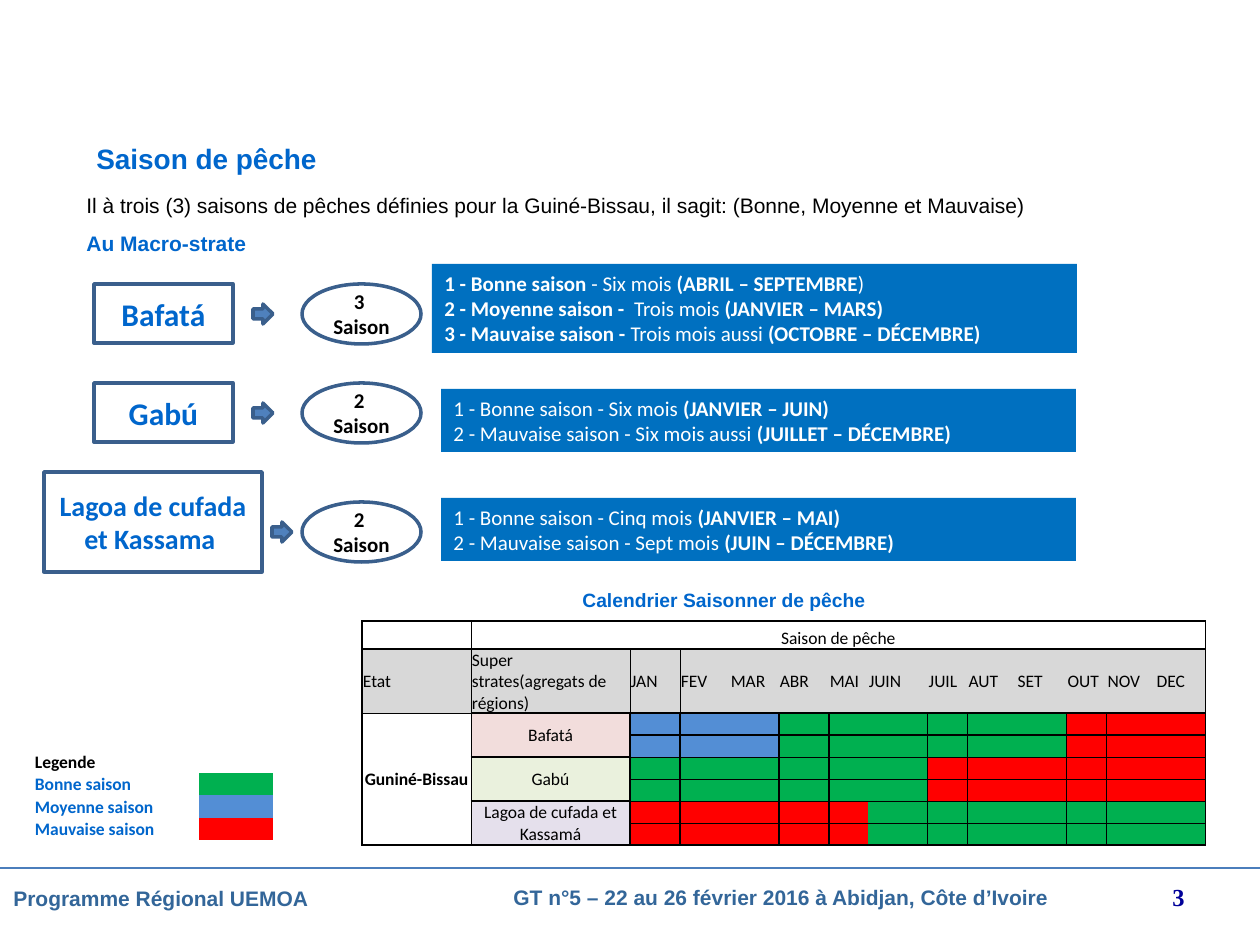
from lxml import etree
from pptx import Presentation
from pptx.dml.color import RGBColor
from pptx.enum.shapes import MSO_CONNECTOR, MSO_SHAPE
from pptx.enum.text import MSO_ANCHOR, PP_ALIGN
from pptx.oxml.ns import qn
from pptx.util import Emu, Pt

RECT, OVAL, ARROW = MSO_SHAPE.RECTANGLE, MSO_SHAPE.OVAL, MSO_SHAPE.RIGHT_ARROW
LEFT, CENTER, RIGHT = PP_ALIGN.LEFT, PP_ALIGN.CENTER, PP_ALIGN.RIGHT
TOP, MIDDLE, BOTTOM = MSO_ANCHOR.TOP, MSO_ANCHOR.MIDDLE, MSO_ANCHOR.BOTTOM
PLAIN_TABLE = "{2D5ABB26-0587-4C30-8999-92F81FD0307C}"
SIDES = ("a:lnL", "a:lnR", "a:lnT", "a:lnB")
COLORS = {
    "black": "000000", "white": "FFFFFF", "title": "0066CC", "panel": "0070C0",
    "outline": "3A5F8C", "arrow": "4F81BD", "rule": "4B7EBC", "footer": "336699",
    "number": "000099", "header": "D8D8D8", "bafata": "F2DDDC", "gabu": "EAF1DD",
    "lagoa": "E5E0EC", "good": "00B050", "medium": "538ED5", "bad": "FF0000",
}
SEASONS = {"B": "good", "M": "medium", "X": "bad"}
MONTHS = "JAN FEV MAR ABR MAI JUIN JUIL AUT SET OUT NOV DEC".split()


def px(length):
    return Emu(round(length * 914400 / 126))


def rgb(name):
    return RGBColor.from_string(COLORS[name])


class Page:
    """Holds the current slide and its style; lengths are in px."""

    def __init__(self, slide):
        self.shapes = slide.shapes

    def fill_text(self, frame, text, size, color, font="Calibri", align=LEFT, bold=False):
        """Fill a frame line by line; parts between ** are bold."""
        for index, line in enumerate(text.split("\n")):
            paragraph = frame.paragraphs[0] if index == 0 else frame.add_paragraph()
            paragraph.alignment = align
            for position, part in enumerate(line.split("**")):
                if not part:
                    continue
                run = paragraph.add_run()
                run.text = part
                run.font.name = font
                run.font.size = Pt(size)
                run.font.bold = bold or position % 2 == 1
                run.font.color.rgb = rgb(color)

    def label(self, area, text, size, color, font="Arial", align=LEFT, bold=True):
        box = self.shapes.add_textbox(*map(px, area))
        box.text_frame.word_wrap = True
        self.fill_text(box.text_frame, text, size, color, font, align, bold)

    def shape(self, kind, area, fill, outline=None):
        shape = self.shapes.add_shape(kind, *map(px, area))
        shape.shadow.inherit = False
        shape.fill.solid()
        shape.fill.fore_color.rgb = rgb(fill)
        if outline:
            shape.line.color.rgb = rgb(outline)
            shape.line.width = Pt(2)
        else:
            shape.line.fill.background()
        return shape

    def panel(self, area, text):
        frame = self.shape(RECT, area, "panel").text_frame
        frame.word_wrap = True
        frame.vertical_anchor = TOP
        self.fill_text(frame, text, 12, "white")

    def node(self, kind, area, text, size, color):
        frame = self.shape(kind, area, "white", "outline").text_frame
        frame.word_wrap = True
        frame.vertical_anchor = MIDDLE
        self.fill_text(frame, text, size, color, align=CENTER, bold=True)

    def rule(self, y, width):
        line = self.shapes.add_connector(MSO_CONNECTOR.STRAIGHT, 0, px(y), px(width), px(y))
        line.line.color.rgb = rgb("rule")
        line.line.width = Pt(0.75)
        etree.SubElement(line._element.spPr, qn("a:effectLst"))

    def table(self, left, top, widths, heights):
        frame = self.shapes.add_table(len(heights), len(widths), px(left), px(top),
                                      px(sum(widths)), px(sum(heights)))
        table = frame.table
        table.first_row = table.horz_banding = False
        table._tbl.tblPr.find(qn("a:tableStyleId")).text = PLAIN_TABLE
        for column, width in zip(table.columns, widths):
            column.width = px(width)
        for row, height in zip(table.rows, heights):
            row.height = px(height)
        for cell in table.iter_cells():
            cell.margin_left = cell.margin_right = cell.margin_top = px(1)
            cell.margin_bottom = 0
            cell.fill.background()
        return table

    def cell(self, cell, text="", fill=None, color="black", align=LEFT, anchor=MIDDLE, bold=False):
        cell.vertical_anchor = anchor
        if fill:
            cell.fill.solid()
            cell.fill.fore_color.rgb = rgb(fill)
        if text:
            self.fill_text(cell.text_frame, text, 10, color, align=align, bold=bold)

    def outline(self, table, row, column, rows, columns, widths, merge=False):
        """Draw left, right, top and bottom borders around a block of cells."""
        if merge and rows * columns > 1:
            table.cell(row, column).merge(table.cell(row + rows - 1, column + columns - 1))
        for r in range(rows):
            for c in range(columns):
                properties = table.cell(row + r, column + c)._tc.get_or_add_tcPr()
                edges = (c == 0, c == columns - 1, r == 0, r == rows - 1)
                whole = merge and r == c == 0
                shown = [(side, width) for side, width, edge in zip(SIDES, widths, edges)
                         if edge or whole]
                for index, (side, width) in enumerate(shown):
                    line = etree.Element(qn(side), w=str(int(Pt(width))))
                    fill = etree.SubElement(line, qn("a:solidFill"))
                    etree.SubElement(fill, qn("a:srgbClr"), val=COLORS["black"])
                    properties.insert(index, line)

    def shrink_empty(self, table):
        """Keep empty cells from stretching their rows."""
        for cell in table.iter_cells():
            paragraph = cell.text_frame.paragraphs[0]
            if not paragraph.runs:
                etree.SubElement(paragraph._p, qn("a:endParaRPr"), sz="600")


def add_calendar(page):
    widths = [109, 159, 50, 50, 49, 50, 39, 60, 40, 49, 50, 40, 49, 50]
    table = page.table(362, 621, widths, [28, 64] + [22] * 6)
    page.outline(table, 0, 0, 1, 1, (1, 0.5, 1, 1))
    page.outline(table, 0, 1, 1, 13, (0.5, 1, 1, 1), merge=True)
    page.cell(table.cell(0, 1), "Saison de pêche", align=CENTER, anchor=BOTTOM)

    for column, text in enumerate(["Etat", "Super strates(agregats de régions)"] + MONTHS):
        page.cell(table.cell(1, column), text, "header")
    page.outline(table, 1, 0, 1, 1, (1, 0.5, 1, 0.5))
    page.outline(table, 1, 1, 1, 1, (0.5, 0.5, 1, 1))
    page.outline(table, 1, 2, 1, 12, (0.5, 1, 0.5, 1))
    page.outline(table, 2, 0, 6, 1, (1, 0.5, 0.5, 1), merge=True)
    page.cell(table.cell(2, 0), "Guniné-Bissau", align=CENTER, bold=True)

    regions = [("Bafatá", "bafata", "MMMBBBBBBXXX"), ("Gabú", "gabu", "BBBBBBXXXXXX"),
               ("Lagoa de cufada et Kassamá", "lagoa", "XXXXXBBBBBBB")]
    for index, (name, fill, seasons) in enumerate(regions):
        row = 2 + 2 * index
        page.outline(table, row, 1, 2, 1, (0.5, 1, 1, 1), merge=True)
        page.cell(table.cell(row, 1), name, fill, align=CENTER)
        top = 1 if index == 0 else 0.5
        bottom = 1 if index == len(regions) - 1 else 0.5
        for quarter in range(2, 14, 3):
            page.outline(table, row, quarter, 2, 3, (1, 1, top, bottom))
        for column, season in enumerate(seasons, 2):
            for half in (row, row + 1):
                page.cell(table.cell(half, column), fill=SEASONS[season])
    page.shrink_empty(table)


def add_legend(page):
    table = page.table(34, 750, [165, 74], [23, 22, 23, 22])
    table.cell(0, 0).merge(table.cell(0, 1))
    page.cell(table.cell(0, 0), "Legende", anchor=BOTTOM, bold=True)
    entries = [("Bonne saison", "good"), ("Moyenne saison", "medium"), ("Mauvaise saison", "bad")]
    for row, (name, fill) in enumerate(entries, 1):
        page.cell(table.cell(row, 0), name, color="title", anchor=BOTTOM, bold=True)
        page.cell(table.cell(row, 1), fill=fill)
    page.shrink_empty(table)


def main():
    deck = Presentation()
    deck.slide_width, deck.slide_height = px(1260), px(945)
    page = Page(deck.slides.add_slide(deck.slide_layouts[6]))

    page.rule(868, 1260)
    page.label((1106, 876, 91, 50), "3", 14, "number", "Times New Roman", RIGHT)
    page.label((501, 878, 655, 50), "GT n°5 – 22 au 26 février 2016 à Abidjan, Côte d’Ivoire", 12, "footer")
    page.label((1, 879, 517, 50), "Programme Régional UEMOA", 12, "footer")
    add_calendar(page)
    add_legend(page)

    page.label((84, 135, 287, 47), "Saison de pêche", 16, "title")
    page.label((74, 224, 198, 38), "Au Macro-strate", 12, "title")
    page.label((74, 186, 1022, 38), "Il à trois (3) saisons de pêches définies pour la Guiné-Bissau, "
               "il sagit: (Bonne, Moyenne et Mauvaise)", 12, "black", bold=False)
    page.label((570, 582, 348, 37), "Calendrier Saisonner de pêche", 11, "title")

    page.panel((432, 264, 645, 89),
               "**1 - Bonne saison** - Six mois **(ABRIL – SEPTEMBRE**)\n"
               "**2 - Moyenne saison -  **Trois mois **(JANVIER – MARS)**\n"
               "**3 - Mauvaise saison - **Trois mois aussi **(OCTOBRE – DÉCEMBRE)**")
    page.panel((441, 389, 635, 63),
               "1 - Bonne saison - Six mois **(JANVIER – JUIN)**\n"
               "2 - Mauvaise saison - Six mois aussi **(JUILLET – DÉCEMBRE)**")
    page.panel((441, 498, 635, 63),
               "1 - Bonne saison - Cinq mois **(JANVIER – MAI)**\n"
               "2 - Mauvaise saison - Sept mois **(JUIN – DÉCEMBRE)**")

    strata = [
        ("Bafatá", 18, (94, 284, 139, 59), 3, 284, 253),
        ("Gabú", 18, (94, 383, 139, 59), 2, 383, 253),
        ("Lagoa de cufada et Kassama ", 16, (44, 472, 218, 100), 2, 502, 272),
    ]
    for name, size, area, count, top, arrow_left in strata:
        page.node(RECT, area, name, size, "title")
        page.node(OVAL, (302, top, 119, 60), f"{count} \nSaison ", 12, "black")
        page.shape(ARROW, (arrow_left, top + 20, 20, 20), "arrow", "outline")

    deck.save("out.pptx")


if __name__ == "__main__":
    main()
